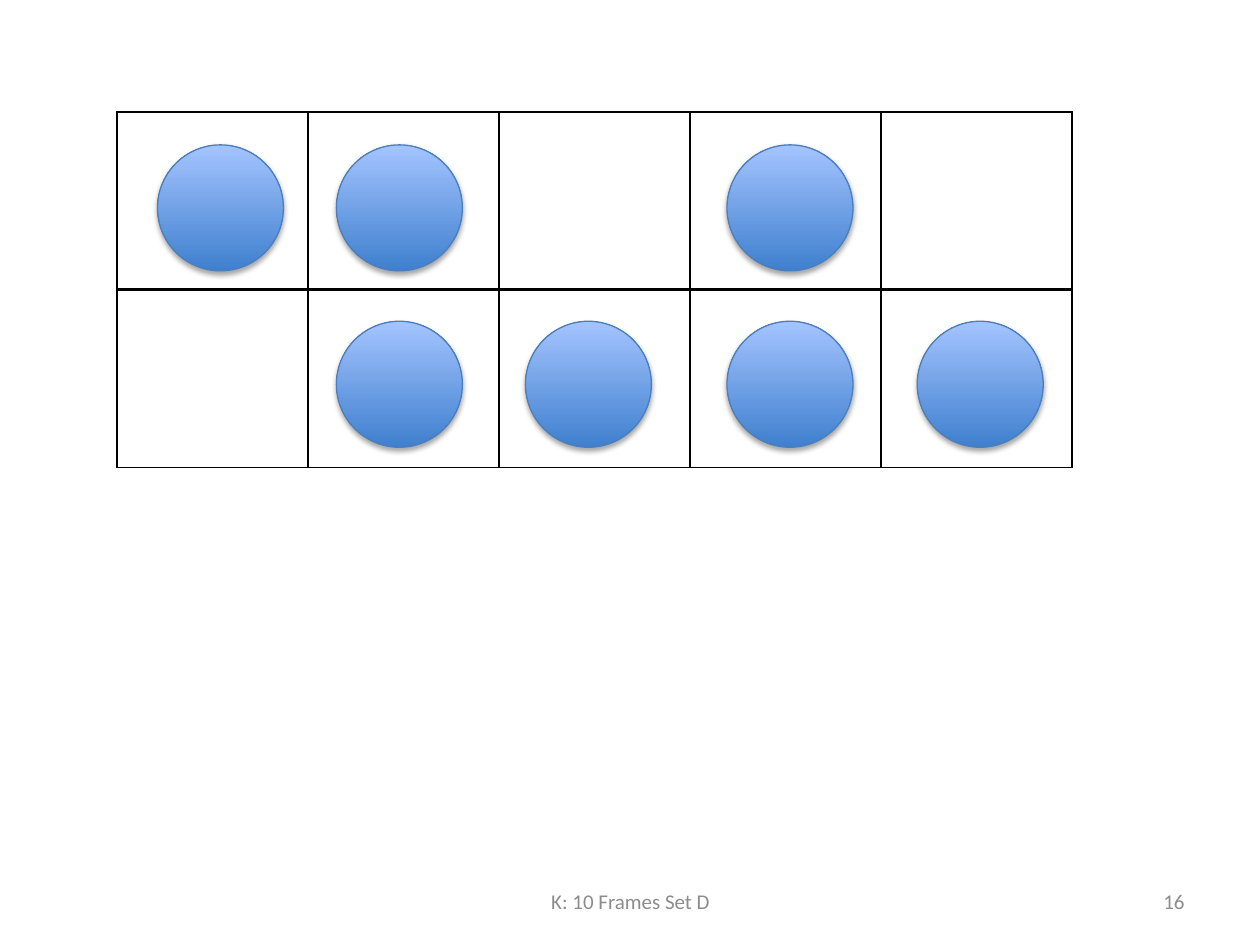
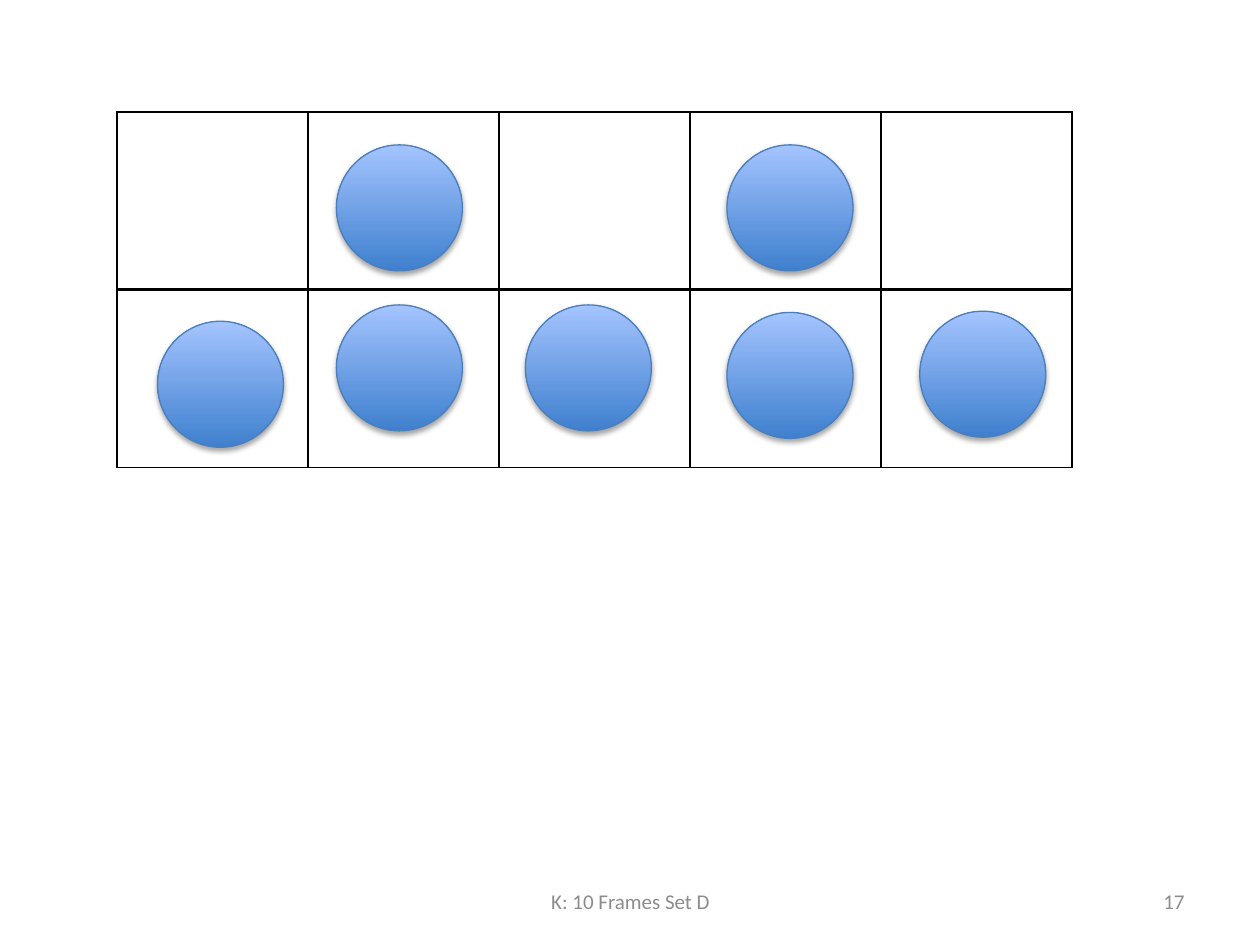
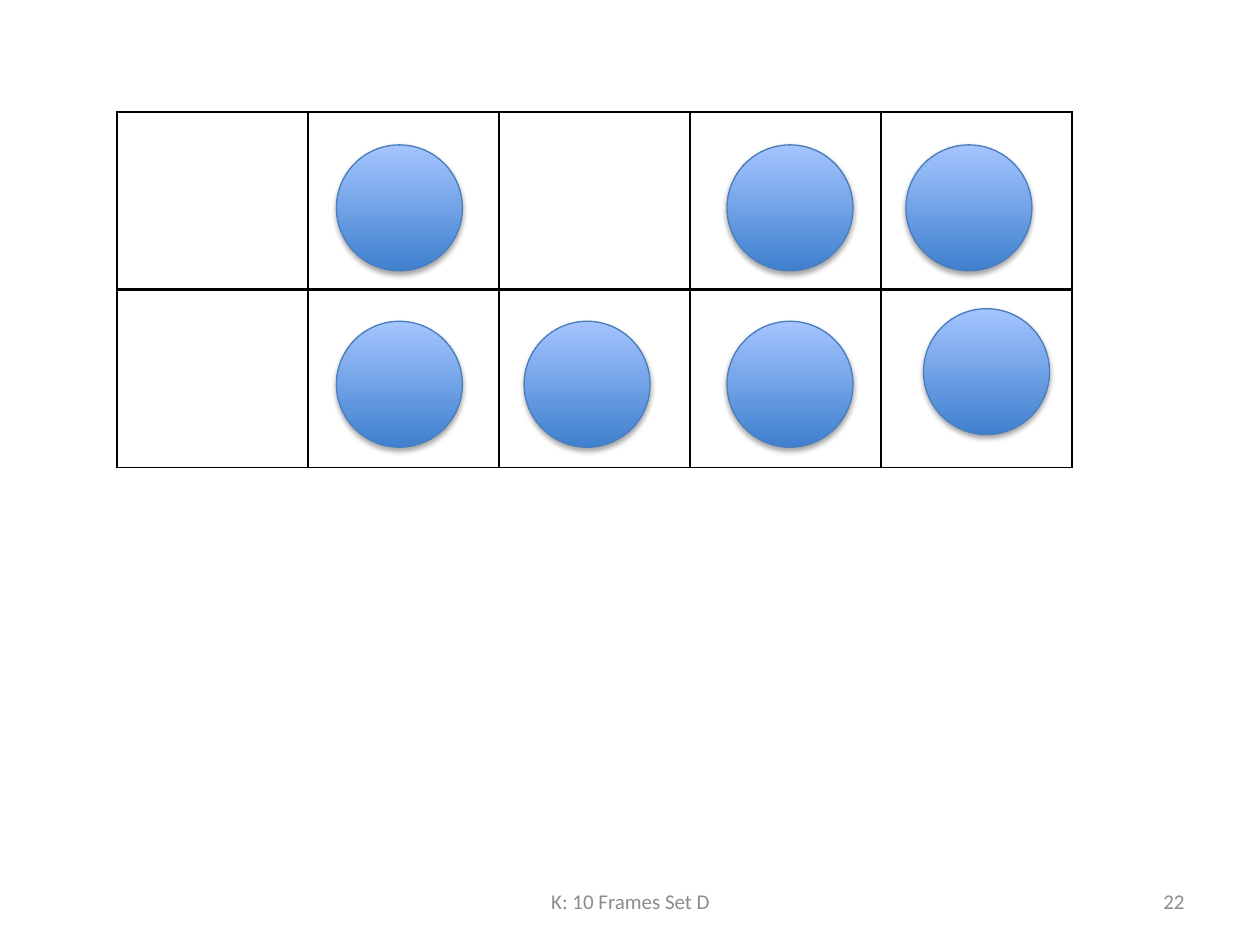
from dataclasses import dataclass

from lxml.etree import SubElement
from pptx import Presentation
from pptx.dml.color import RGBColor
from pptx.enum.shapes import MSO_SHAPE
from pptx.enum.text import MSO_ANCHOR, PP_ALIGN
from pptx.oxml.ns import qn
from pptx.util import Inches, Pt


@dataclass(frozen=True)
class Theme:
    """Colours, type and line widths shared by all slides."""

    paper: str = "FFFFFF"
    grid: str = "000000"
    counter_low: str = "3F80CE"
    counter_high: str = "A4C4FF"
    counter_edge: str = "4B7EBC"
    shadow: str = "000000"
    footer: str = "8C8C8C"
    font: str = "Calibri"
    footer_size: float = 12
    thin: float = 1
    thick: float = 2
    counter_line: float = 0.75


@dataclass(frozen=True)
class Box:
    """A region in inches."""

    left: float
    top: float
    width: float
    height: float

    def lengths(self):
        """Return the region as slide lengths."""
        return [Inches(side) for side in (self.left, self.top, self.width, self.height)]


THEME = Theme()
FRAME = Box(0.93, 0.89, 7.58, 2.82)
FOOTER = Box(3.42, 6.95, 6.08, 0.4)
FOOTER_TEXT = "K: 10 Frames Set D"
ROWS, COLUMNS = 2, 5
COUNTER_SIZE = 1
COUNTER_LEFTS = (0.32, 1.74, 3.24, 4.84, 6.35)
COUNTER_TOPS = (0.26, 1.66)

CARDS = [
    (16, ("●●·●·", "·●●●●"), {}),
    (
        17,
        ("·●·●·", "●●●●●"),
        {(1, 1): (0, -0.13), (1, 2): (0, -0.13), (1, 3): (0, -0.07), (1, 4): (0.02, -0.08)},
    ),
    (
        22,
        ("·●·●●", "·●●●●"),
        {(0, 4): (-0.09, 0), (1, 2): (-0.01, 0), (1, 4): (0.05, -0.1)},
    ),
]


def color(value):
    """Turn a hex value into a colour."""
    return RGBColor.from_string(value)


def set_borders(cell, widths):
    """Draw the left, right, top and bottom borders of a cell."""
    properties = cell._tc.get_or_add_tcPr()
    for side, width in zip("LRTB", widths):
        line = SubElement(properties, qn(f"a:ln{side}"), w=str(Pt(width)))
        fill = SubElement(line, qn("a:solidFill"))
        SubElement(fill, qn("a:srgbClr"), val=THEME.grid)


def add_frame(page, box):
    """Add the empty ten frame with its heavy middle line."""
    table = page.shapes.add_table(ROWS, COLUMNS, *box.lengths()).table
    table.first_row = False
    table.horz_banding = False
    for row in range(ROWS):
        top = THEME.thick if row else THEME.thin
        bottom = THEME.thin if row else THEME.thick
        for column in range(COLUMNS):
            cell = table.cell(row, column)
            set_borders(cell, (THEME.thin, THEME.thin, top, bottom))
            cell.fill.solid()
            cell.fill.fore_color.rgb = color(THEME.paper)


def add_counter(page, box):
    """Add one shaded round counter."""
    counter = page.shapes.add_shape(MSO_SHAPE.OVAL, *box.lengths())
    counter.fill.gradient()
    counter.fill.gradient_angle = 90
    for stop, shade in zip(counter.fill.gradient_stops, (THEME.counter_low, THEME.counter_high)):
        stop.color.rgb = color(shade)
    counter.line.color.rgb = color(THEME.counter_edge)
    counter.line.width = Pt(THEME.counter_line)
    counter.shadow.inherit = False
    effects = counter._element.spPr.find(qn("a:effectLst"))
    shadow = SubElement(
        effects,
        qn("a:outerShdw"),
        blurRad=str(Pt(3.1)),
        dist=str(Pt(1.8)),
        dir="5400000",
        rotWithShape="0",
    )
    tone = SubElement(shadow, qn("a:srgbClr"), val=THEME.shadow)
    SubElement(tone, qn("a:alpha"), val="35000")


def add_counters(page, box, pattern, nudges):
    """Place counters in the filled cells, moved by any nudges."""
    for row, marks in enumerate(pattern):
        for column, mark in enumerate(marks):
            if mark == "●":
                right, down = nudges.get((row, column), (0, 0))
                left = box.left + COUNTER_LEFTS[column] + right
                top = box.top + COUNTER_TOPS[row] + down
                add_counter(page, Box(left, top, COUNTER_SIZE, COUNTER_SIZE))


def add_label(page, box, text, alignment):
    """Add one line of footer text."""
    frame = page.shapes.add_textbox(*box.lengths()).text_frame
    frame.word_wrap = True
    frame.vertical_anchor = MSO_ANCHOR.MIDDLE
    para = frame.paragraphs[0]
    para.text = text
    para.alignment = alignment
    para.font.name = THEME.font
    para.font.size = Pt(THEME.footer_size)
    para.font.color.rgb = color(THEME.footer)


def add_footer(page, box, number):
    """Add the set name and the page number."""
    name_box = Box(box.left, box.top, 3.17, box.height)
    number_box = Box(box.left + 3.75, box.top, 2.33, box.height)
    add_label(page, name_box, FOOTER_TEXT, PP_ALIGN.CENTER)
    add_label(page, number_box, str(number), PP_ALIGN.RIGHT)


def add_card(deck, number, pattern, nudges):
    """Add one ten frame slide."""
    page = deck.slides.add_slide(deck.slide_layouts[6])
    page.background.fill.solid()
    page.background.fill.fore_color.rgb = color(THEME.paper)
    add_frame(page, FRAME)
    add_footer(page, FOOTER, number)
    add_counters(page, FRAME, pattern, nudges)


def main():
    """Build and save the deck."""
    deck = Presentation()
    deck.slide_width = Inches(10)
    deck.slide_height = Inches(7.5)
    for card in CARDS:
        add_card(deck, *card)
    deck.save("out.pptx")


if __name__ == "__main__":
    main()
